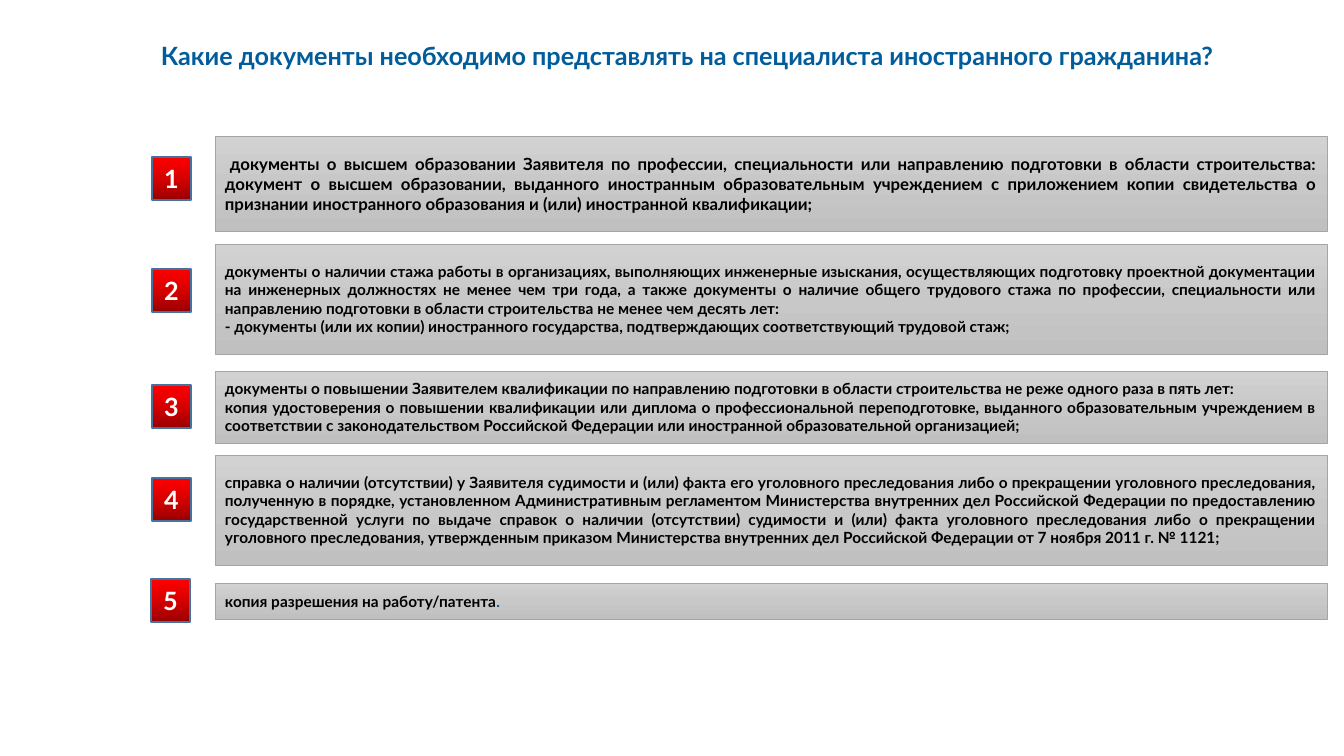
from copy import deepcopy

from pptx import Presentation
from pptx.dml.color import RGBColor as Rgb
from pptx.enum.shapes import MSO_SHAPE as Kind
from pptx.enum.text import MSO_ANCHOR as Anchor, PP_ALIGN as Align
from pptx.oxml.ns import qn
from pptx.util import Pt

HUES = {
    "blue": "005C9B", "black": "000000", "white": "FFFFFF",
    "edge": "43739E", "rim": "A5A5A5",
    "red top": "FF0000", "red mid": "D70000", "red end": "970000",
    "gray top": "D2D2D2", "gray mid": "C8C8C8", "gray end": "C0C0C0",
}

TITLE = "Какие документы необходимо представлять на специалиста иностранного гражданина?"

ITEMS = [
    (136, 95, 152, 157, 12, 5, [[
        ("документы о высшем образовании Заявителя по профессии, специальности или "
         "направлению подготовки в области строительства: документ о высшем образовании, "
         "выданного иностранным образовательным учреждением с приложением копии "
         "свидетельства о признании иностранного образования и (или) иностранной "
         "квалификации;", "black")]]),
    (244, 110, 152, 269, 11, 0, [[
        ("документы о наличии стажа работы в организациях, выполняющих инженерные "
         "изыскания, осуществляющих подготовку проектной документации на инженерных "
         "должностях не менее чем три года, а также документы о наличие общего трудового "
         "стажа по профессии, специальности или направлению подготовки в области "
         "строительства не менее чем десять лет:", "black")], [
        ("- документы (или их копии) иностранного государства, подтверждающих "
         "соответствующий трудовой стаж;", "black")]]),
    (371, 72, 152, 385, 11, 0, [[
        ("документы о повышении Заявителем квалификации по направлению подготовки в "
         "области строительства не реже одного раза в пять лет:", "black")], [
        ("копия удостоверения о повышении квалификации или диплома о профессиональной "
         "переподготовке, выданного образовательным учреждением в соответствии с "
         "законодательством Российской Федерации или иностранной образовательной "
         "организацией;", "black")]]),
    (455, 110, 152, 478, 11, 0, [[
        ("справка о наличии (отсутствии) у Заявителя судимости и (или) факта его "
         "уголовного преследования либо о прекращении уголовного преследования, "
         "полученную в порядке, установленном Административным регламентом Министерства "
         "внутренних дел Российской Федерации по предоставлению государственной услуги "
         "по выдаче справок о наличии (отсутствии) судимости и (или) факта уголовного "
         "преследования либо о прекращении уголовного преследования, утвержденным "
         "приказом Министерства внутренних дел Российской Федерации от 7 ноября 2011 г. "
         "№ 1121;", "black")]]),
    (583, 36, 151, 579, 11, 0, [[
        ("копия разрешения на работу/патента", "black"), (".", "blue")]]),
]


def px(num):
    return round(num * 914400 / 100.8)


def hue(name):
    return Rgb.from_string(HUES[name])


class Deck:
    """Draws titles, badges and panels on a slide in one style."""

    def __init__(self):
        self.prs = Presentation()
        self.prs.slide_width, self.prs.slide_height = px(1344), px(756)
        self.slide = self.prs.slides.add_slide(self.prs.slide_layouts[6])
        self.style = {"name": "Lato", "bold": True}

    def label(self, shape, paras, size, align, anchor, dent=0):
        frame = shape.text_frame
        frame.word_wrap = True
        frame.vertical_anchor = anchor
        for num, runs in enumerate(paras):
            para = frame.add_paragraph() if num else frame.paragraphs[0]
            para.alignment = align
            if dent:
                para._p.get_or_add_pPr().set("indent", str(px(dent)))
            for text, tone in runs:
                run = para.add_run()
                run.text = text
                for key, val in {**self.style, "size": Pt(size)}.items():
                    setattr(run.font, key, val)
                run.font.color.rgb = hue(tone)

    def block(self, area, tone, rim, width):
        shape = self.slide.shapes.add_shape(Kind.RECTANGLE, *map(px, area))
        shape.shadow.inherit = False
        shape.line.color.rgb = hue(rim)
        shape.line.width = Pt(width)
        fill = shape.fill
        fill.gradient()
        fill.gradient_angle = 270
        stops = shape._element.spPr.find(".//" + qn("a:gsLst"))
        stops.insert(1, deepcopy(stops[0]))
        for num, part in enumerate(("top", "mid", "end")):
            stop = fill.gradient_stops[num]
            stop.position = num / 2
            stop.color.rgb = hue(f"{tone} {part}")
        return shape

    def title(self, text, area):
        shape = self.slide.shapes.add_textbox(*map(px, area))
        self.label(shape, [[(text, "blue")]], 18, Align.LEFT, Anchor.TOP)

    def badge(self, num, left, top):
        shape = self.block((left, top, 39, 43), "red", "edge", 1)
        self.label(shape, [[(str(num), "white")]], 18, Align.CENTER, Anchor.MIDDLE)

    def panel(self, paras, top, high, size, dent):
        shape = self.block((215, top, 1112, high), "gray", "rim", 0.5)
        self.label(shape, paras, size, Align.JUSTIFY, Anchor.MIDDLE, dent)


def main():
    deck = Deck()
    for num, (top, high, left, mark, size, dent, paras) in enumerate(ITEMS, 1):
        deck.badge(num, left, mark)
        deck.panel(paras, top, high, size, dent)
    deck.title(TITLE, (151, 35, 1175, 40))
    deck.prs.save("out.pptx")


if __name__ == "__main__":
    main()
